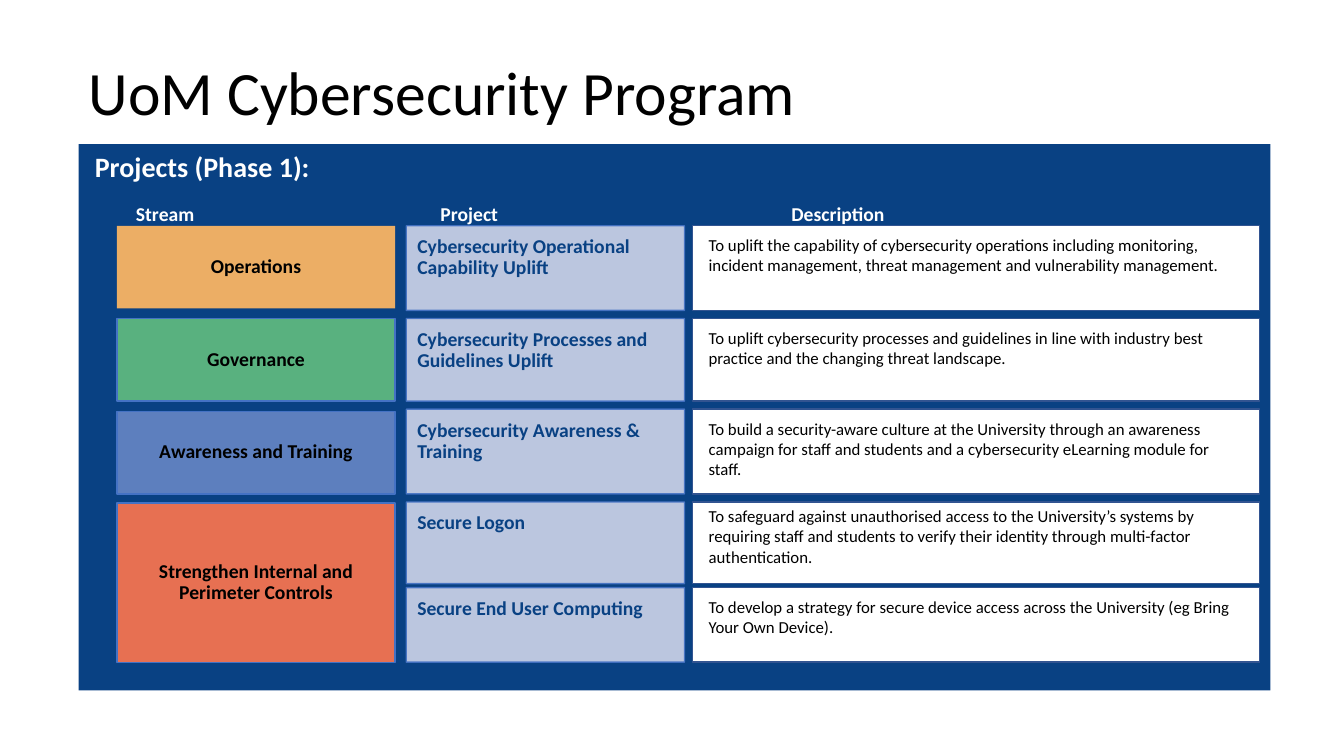
from pptx import Presentation
from pptx.dml.color import RGBColor
from pptx.enum.shapes import MSO_SHAPE
from pptx.enum.text import MSO_ANCHOR, MSO_AUTO_SIZE, PP_ALIGN
from pptx.oxml.ns import qn
from pptx.util import Inches, Pt
from lxml import etree

RECTANGLE = MSO_SHAPE.RECTANGLE
TOP, MIDDLE = MSO_ANCHOR.TOP, MSO_ANCHOR.MIDDLE
LEFT, CENTER = PP_ALIGN.LEFT, PP_ALIGN.CENTER
NO_FIT, GROW = MSO_AUTO_SIZE.NONE, MSO_AUTO_SIZE.SHAPE_TO_FIT_TEXT
TITLE_ONLY = 5
FONT = "Calibri"
COLORS = {
    "black": "000000", "white": "FFFFFF", "navy": "094183",
    "orange": "ECAE65", "green": "59B17F", "blue": "5D7FBE", "red": "E77052",
    "pale": "CFD5EA", "outline": "4472C4", "frame": "325491",
}
DEFAULT_INSETS = (0.1, 0.05, 0.1, 0.05)
STREAM_INSETS = (0.11, 0.06, 0.11, 0.06)
PROJECT_INSETS = (0.11, 0.11, 0.15, 0.17)

# Horizontal places are measured from the panel's left edge: offset, width
STREAM_COLUMN = (0.38, 2.76)
PROJECT_COLUMN = (3.25, 2.76)
DESCRIPTION_COLUMN = (6.09, 5.62)
HEADERS = [("Stream", 0.47), ("Project", 3.49), ("Description", 6.97)]

# Vertical places are measured from the panel's top edge: offset, height
STREAMS = [
    ("Operations", "orange", None, 0.81, 0.82),
    ("Governance", "green", "outline", 1.73, 0.82),
    ("Awareness and Training", "blue", "outline", 2.65, 0.82),
    ("Strengthen Internal and Perimeter Controls", "red", "outline", 3.56, 1.58),
]
# project, description, offset, height, description's gap from the top
PROJECTS = [
    ("Cybersecurity Operational Capability Uplift",
     "To uplift the capability of cybersecurity operations including monitoring, "
     "incident management, threat management and vulnerability management.",
     0.81, 0.84, 0.04),
    ("Cybersecurity Processes and Guidelines Uplift",
     "To uplift cybersecurity processes and guidelines in line with industry best "
     "practice and the changing threat landscape.",
     1.73, 0.82, 0.04),
    ("Cybersecurity Awareness & Training",
     "To build a security-aware culture at the University through an awareness "
     "campaign for staff and students and a cybersecurity eLearning module for staff.",
     2.63, 0.84, 0.04),
    ("Secure Logon",
     "To safeguard against unauthorised access to the University’s systems by "
     "requiring staff and students to verify their identity through multi-factor "
     "authentication.",
     3.55, 0.81, -0.01),
    ("Secure End User Computing",
     "To develop a strategy for secure device access across the University "
     "(eg Bring Your Own Device).",
     4.4, 0.74, 0.04),
]


def rgb(name):
    return RGBColor.from_string(COLORS[name])


def write_text(box, text, size=14, color="black", bold=False, align=LEFT,
               anchor=TOP, spacing=None, insets=DEFAULT_INSETS, fit=NO_FIT):
    frame = box.text_frame
    frame.word_wrap = True
    frame.auto_size = fit
    frame.vertical_anchor = anchor
    (frame.margin_left, frame.margin_top,
     frame.margin_right, frame.margin_bottom) = map(Inches, insets)
    para = frame.paragraphs[0]
    para.alignment = align
    if spacing:
        para.line_spacing = spacing
    span = para.add_run()
    span.text = text
    span.font.name = FONT
    span.font.size = Pt(size)
    span.font.bold = bold
    span.font.color.rgb = rgb(color)


def set_opacity(shape, percent):
    """Make the shape's fill and outline partly clear."""
    for color in shape._element.spPr.iter(qn("a:srgbClr")):
        etree.SubElement(color, qn("a:alpha")).set("val", str(percent * 1000))


def add_box(page, left, top, width, height, fill, line=None):
    box = page.shapes.add_shape(RECTANGLE, *map(Inches, (left, top, width, height)))
    box.shadow.inherit = False
    box.fill.solid()
    box.fill.fore_color.rgb = rgb(fill)
    if line:
        box.line.color.rgb = rgb(line)
        box.line.width = Pt(1)
    else:
        box.line.fill.background()
    return box


def add_label(page, left, top, width, height, text, **style):
    label = page.shapes.add_textbox(*map(Inches, (left, top, width, height)))
    write_text(label, text, fit=GROW, **style)


def add_title(page, left, top, width, height):
    title = page.shapes.title
    title.left, title.top, title.width, title.height = map(
        Inches, (left, top, width, height))
    write_text(title, "UoM Cybersecurity Program", size=44, anchor=MIDDLE, spacing=0.9)


def add_panel(page, left, top, width, height):
    panel = add_box(page, left, top, width, height, "navy")
    write_text(panel, "Projects (Phase 1):", size=20, color="white", bold=True,
               insets=(0.16, 0.05, 0.1, 0.05))


def add_streams(page, left, top):
    offset, width = STREAM_COLUMN
    for name, fill, line, row, height in STREAMS:
        box = add_box(page, left + offset, top + row, width, height, fill, line)
        write_text(box, name, bold=True, align=CENTER, anchor=MIDDLE,
                   spacing=0.9, insets=STREAM_INSETS)


def add_projects(page, left, top):
    project_left, project_width = PROJECT_COLUMN
    detail_left, detail_width = DESCRIPTION_COLUMN
    for name, description, row, height, gap in PROJECTS:
        box = add_box(page, left + project_left, top + row, project_width, height,
                      "pale", "outline")
        set_opacity(box, 90)
        write_text(box, name, color="navy", bold=True, spacing=0.9,
                   insets=PROJECT_INSETS)
        add_box(page, left + detail_left, top + row, detail_width, height,
                "white", "frame")
        add_label(page, left + detail_left + 0.06, top + row + gap,
                  detail_width - 0.17, height - 0.13, description, size=12)


def add_headers(page, left, top):
    for name, offset in HEADERS:
        add_label(page, left + offset, top + 0.52, 1.47, 0.34, name,
                  color="white", bold=True)


def main():
    deck = Presentation()
    deck.slide_width, deck.slide_height = Inches(13.33), Inches(7.5)
    page = deck.slides.add_slide(deck.slide_layouts[TITLE_ONLY])
    left, top = 0.78, 1.43
    add_title(page, left, 0.22, 11.5, 1.45)
    add_panel(page, left, top, 11.82, 5.42)
    add_streams(page, left, top)
    add_projects(page, left, top)
    add_headers(page, left, top)
    deck.save("out.pptx")


if __name__ == "__main__":
    main()
